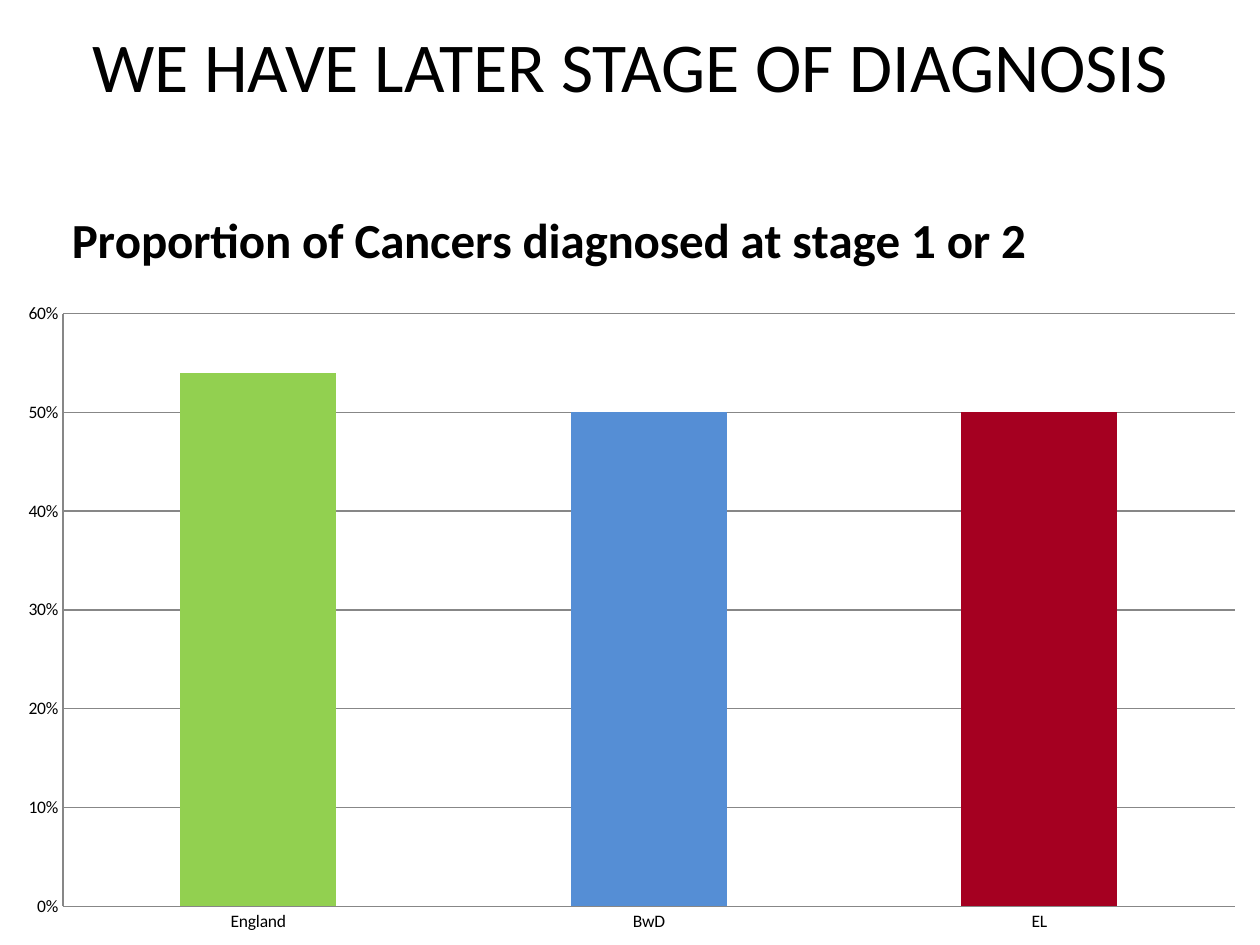
from dataclasses import dataclass

import pptx
import pptx.chart.data
import pptx.dml.color
import pptx.enum.chart
import pptx.enum.text
import pptx.oxml
import pptx.oxml.ns
import pptx.util
from pptx.util import Pt

FONT = "Calibri"
BLACK = "000000"
AXIS_GREY = "878787"


@dataclass(frozen=True)
class Area:
    area: str
    proportion: float
    color: str


AREAS = [
    Area("England", 0.54, "92D050"),
    Area("BwD", 0.5, "558ED5"),
    Area("EL", 0.5, "A50021"),
]


def rgb(color: str) -> pptx.dml.color.RGBColor:
    return pptx.dml.color.RGBColor.from_string(color)


def style_font(font, size: float, bold: bool = False) -> None:
    font.name = FONT
    font.size = Pt(size)
    font.bold = bold
    font.color.rgb = rgb(BLACK)


def style_line(line_format) -> None:
    line_format.line.color.rgb = rgb(AXIS_GREY)
    line_format.line.width = Pt(0.75)


def place(parent, index: int, target: str = "", **fractions: float) -> None:
    """Give a chart part a manual layout in fractions of the chart."""
    for old_layout in parent.findall(pptx.oxml.ns.qn("c:layout")):
        parent.remove(old_layout)
    parts = [f'<c:layoutTarget val="{target}"/>'] if target else []
    parts += [f'<c:{axis}Mode val="edge"/>' for axis in "xy"]
    parts += [f'<c:{key} val="{value}"/>' for key, value in fractions.items()]
    parent.insert(index, pptx.oxml.parse_xml(
        f'<c:layout {pptx.oxml.ns.nsdecls("c")}><c:manualLayout>'
        f'{"".join(parts)}</c:manualLayout></c:layout>'))


def add_heading(slide) -> None:
    heading = slide.shapes.add_textbox(Pt(36), Pt(0), Pt(648), Pt(73.5))
    frame = heading.text_frame
    frame.word_wrap = True
    frame.vertical_anchor = pptx.enum.text.MSO_ANCHOR.MIDDLE
    paragraph = frame.paragraphs[0]
    paragraph.alignment = pptx.enum.text.PP_ALIGN.CENTER
    run = paragraph.add_run()
    run.text = "WE HAVE LATER STAGE OF DIAGNOSIS"
    style_font(run.font, 40)


def add_diagnosis_chart(slide) -> None:
    stage_data = pptx.chart.data.CategoryChartData(number_format="0%")
    stage_data.categories = [area.area for area in AREAS]
    stage_data.add_series("Series 1", [area.proportion for area in AREAS])
    chart = slide.shapes.add_chart(
        pptx.enum.chart.XL_CHART_TYPE.COLUMN_CLUSTERED,
        Pt(0), Pt(100), Pt(720), Pt(440), stage_data).chart
    chart.has_legend = False
    style_font(chart.font, 10)

    # Chart title
    chart.has_title = True
    run = chart.chart_title.text_frame.paragraphs[0].add_run()
    run.text = "Proportion of Cancers diagnosed at stage 1 or 2"
    style_font(run.font, 28, bold=True)
    chart.chart_title.include_in_layout = False
    place(chart.chart_title.element, 1, x=0.05, y=0.03)

    # Plot area
    plot_area = chart.element.find(".//" + pptx.oxml.ns.qn("c:plotArea"))
    place(plot_area, 0, "inner", x=0.05, y=0.18, w=0.93, h=0.77)

    # Axes
    for axis in (chart.category_axis, chart.value_axis):
        axis.major_tick_mark = pptx.enum.chart.XL_TICK_MARK.NONE
        axis.minor_tick_mark = pptx.enum.chart.XL_TICK_MARK.NONE
        style_line(axis.format)
    proportions = chart.value_axis
    proportions.minimum_scale = 0
    proportions.maximum_scale = 0.6
    proportions.major_unit = 0.1
    proportions.tick_labels.number_format = "0%"
    proportions.tick_labels.number_format_is_linked = False
    proportions.has_major_gridlines = True
    style_line(proportions.major_gridlines.format)

    # Columns, one colour per area
    columns = chart.plots[0]
    columns.gap_width = 150
    columns.vary_by_categories = False
    for index, area in enumerate(AREAS):
        fill = columns.series[0].points[index].format.fill
        fill.solid()
        fill.fore_color.rgb = rgb(area.color)


def main() -> None:
    deck = pptx.Presentation()
    deck.slide_width, deck.slide_height = Pt(720), Pt(540)
    slide = deck.slides.add_slide(deck.slide_layouts[6])
    add_heading(slide)
    add_diagnosis_chart(slide)
    deck.save("out.pptx")


if __name__ == "__main__":
    main()
